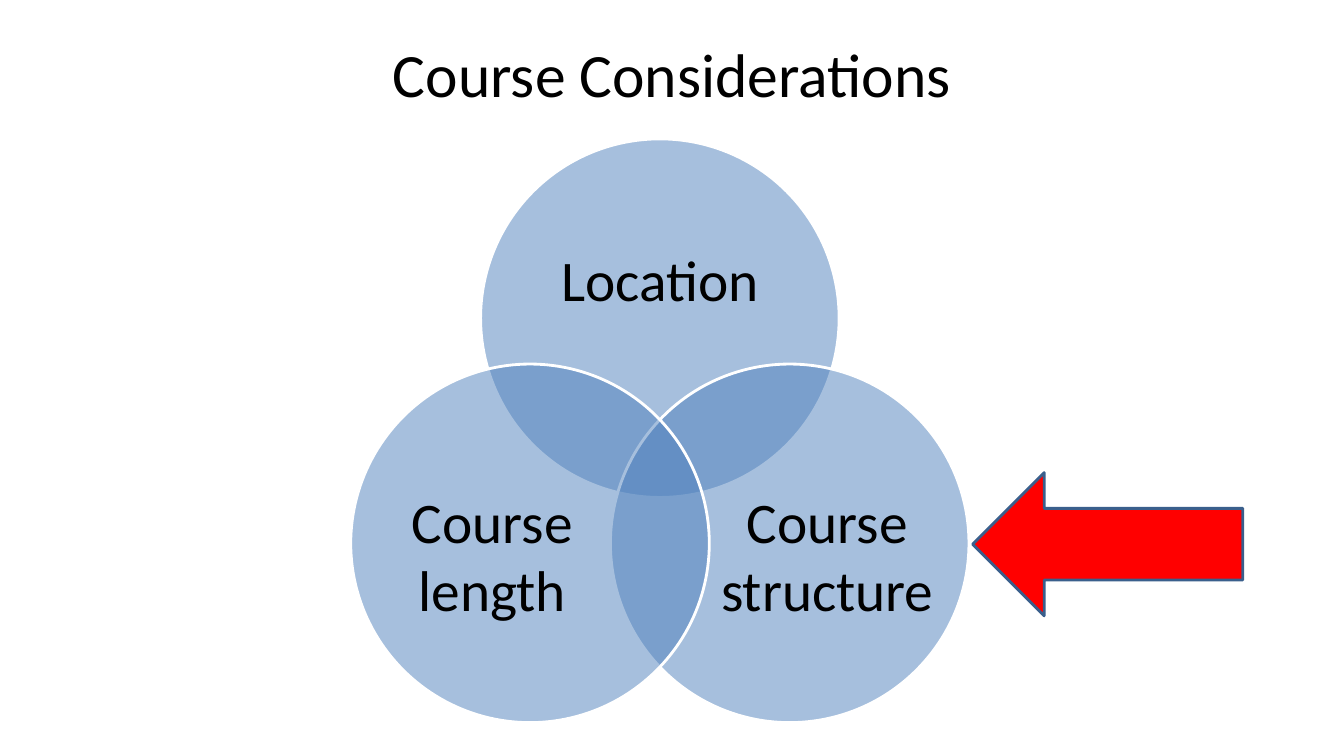
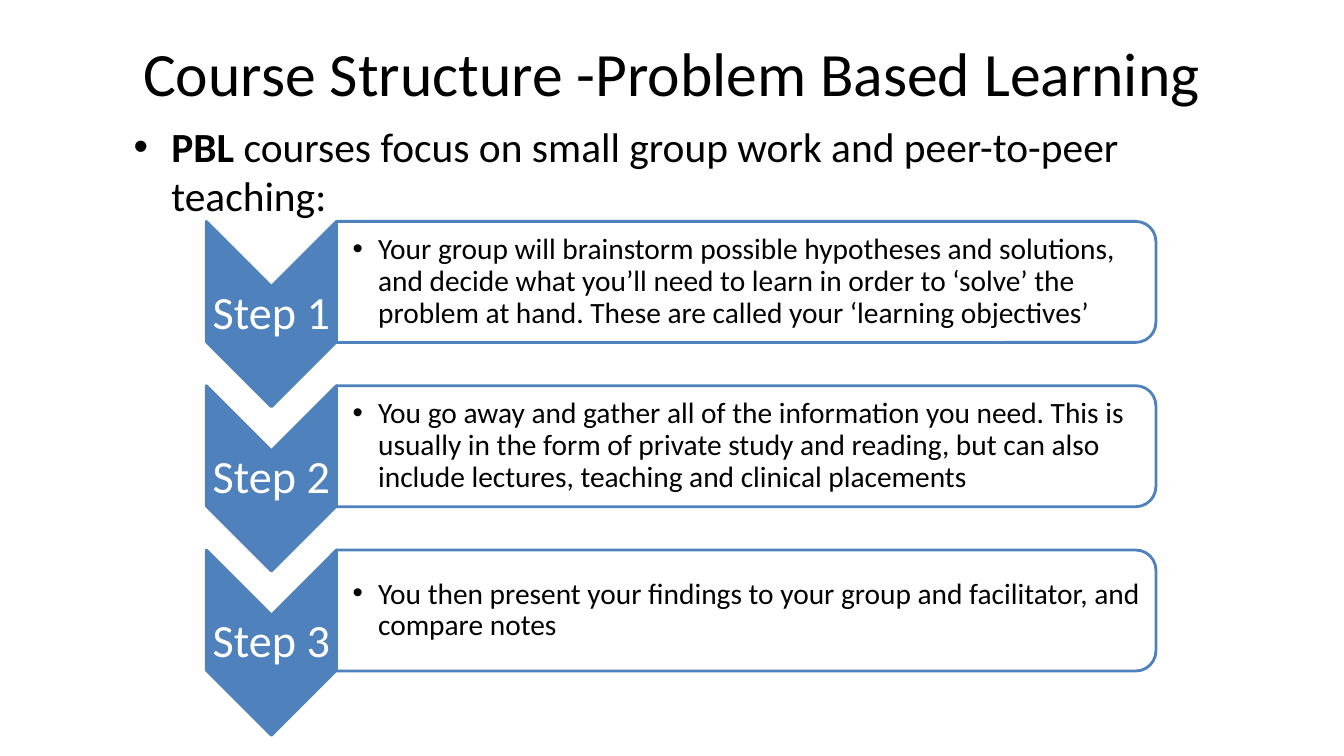
from lxml import etree
from pptx import Presentation
from pptx.dml.color import RGBColor
from pptx.enum.shapes import MSO_SHAPE
from pptx.enum.text import MSO_ANCHOR, MSO_AUTO_SIZE, PP_ALIGN
from pptx.oxml.ns import qn
from pptx.util import Cm, Pt

OVAL, LEFT_ARROW = MSO_SHAPE.OVAL, MSO_SHAPE.LEFT_ARROW
CHEVRON, ROUNDED_END = MSO_SHAPE.CHEVRON, MSO_SHAPE.ROUND_2_SAME_RECTANGLE
MIDDLE, TOP = MSO_ANCHOR.MIDDLE, MSO_ANCHOR.TOP
CENTER, LEFT = PP_ALIGN.CENTER, PP_ALIGN.LEFT

BLUE = RGBColor(0x4F, 0x81, 0xBD)
ARROW_EDGE = RGBColor(0x3A, 0x5F, 0x8C)
RED = RGBColor(0xFF, 0x00, 0x00)
WHITE = RGBColor(0xFF, 0xFF, 0xFF)
BLACK = RGBColor(0x00, 0x00, 0x00)
FONT = "Calibri"
LINE_WIDTH = Pt(2)
TITLE_SIZE, CIRCLE_SIZE, STEP_SIZE, DETAIL_SIZE, INTRO_SIZE = 44, 41, 33, 21, 29.6

STEPS = [
    ("Step 1", "Your group will brainstorm possible hypotheses and solutions, and "
               "decide what you’ll need to learn in order to ‘solve’ the problem at "
               "hand. These are called your ‘learning objectives’"),
    ("Step 2", "You go away and gather all of the information you need. This is "
               "usually in the form of private study and reading, but can also "
               "include lectures, teaching and clinical placements"),
    ("Step 3", "You then present your findings to your group and facilitator, and "
               "compare notes"),
]


def set_all(target, values):
    for name, value in values.items():
        setattr(target, name, value)


def place(shape, box):
    set_all(shape, dict(zip(("left", "top", "width", "height"), map(Cm, box))))


def write(frame, runs, size, color=BLACK, align=CENTER, anchor=MIDDLE,
          spacing=1.0, insets=None):
    """Fill the frame with one paragraph of (text, bold) runs and return it."""
    set_all(frame, {"word_wrap": True, "auto_size": MSO_AUTO_SIZE.NONE,
                    "vertical_anchor": anchor})
    if insets:
        sides = ("margin_left", "margin_top", "margin_right", "margin_bottom")
        set_all(frame, dict(zip(sides, map(Cm, insets))))
    paragraph = frame.paragraphs[0]
    set_all(paragraph, {"alignment": align, "line_spacing": spacing})
    for text, bold in runs:
        run = paragraph.add_run()
        run.text = text
        set_all(run.font, {"name": FONT, "size": Pt(size), "bold": bold})
        run.font.color.rgb = color
    return paragraph


def add_text(slide, box, runs, size, **style):
    label = slide.shapes.add_textbox(*map(Cm, box))
    return write(label.text_frame, runs, size, **style)


def add_bullet(paragraph, indent):
    properties = paragraph._p.get_or_add_pPr()
    properties.set("marL", str(Cm(indent)))
    properties.set("indent", str(-Cm(indent)))
    etree.SubElement(properties, qn("a:buFont"), typeface="Arial")
    etree.SubElement(properties, qn("a:buChar"), char="•")


def add_figure(slide, preset, box, fill, edge, opacity=100, turned=False):
    """Draw a preset shape; a turned one fills the box after a quarter turn."""
    left, top, width, height = box
    if turned:
        shift = (width - height) / 2
        box = left + shift, top - shift, height, width
    figure = slide.shapes.add_shape(preset, *map(Cm, box))
    figure.shadow.inherit = False
    figure.rotation = 90 if turned else 0
    figure.fill.solid()
    figure.fill.fore_color.rgb = fill
    figure.line.color.rgb = edge
    figure.line.width = LINE_WIDTH
    if opacity < 100:
        color = figure._element.spPr.find(qn("a:solidFill"))[0]
        etree.SubElement(color, qn("a:alpha"), val=str(opacity * 1000))


def add_titled_slide(deck, title, box):
    slide = deck.slides.add_slide(deck.slide_layouts[5])
    place(slide.shapes.title, box)
    write(slide.shapes.title.text_frame, [(title, False)], TITLE_SIZE)
    return slide


def add_venn(slide, box):
    left, top, width, height = box
    diameter = 0.58 * width
    side, drop = width - diameter, height - diameter
    wide, narrow = (6.63, 4.06), (5.41, 4.98)
    outer = 0.86
    inner = diameter - outer - narrow[0]
    circles = [
        ("Location", side / 2, 0, (diameter - wide[0]) / 2, 1.6, wide, 0.9),
        ("Course structure", side, drop, inner, 2.31, narrow, 1.0),
        ("Course length", 0, drop, outer, 2.31, narrow, 1.0),
    ]
    for name, x, y, text_x, text_y, text_size, spacing in circles:
        x, y = left + x, top + y
        add_figure(slide, OVAL, (x, y, diameter, diameter), BLUE, WHITE, opacity=50)
        add_text(slide, (x + text_x, y + text_y, *text_size), [(name, False)],
                 CIRCLE_SIZE, spacing=spacing, insets=(0, 0, 0, 0))


def add_step(slide, box, name, detail):
    left, top, width, height = box
    arrow_width, panel_height, label_height, gap = 3.28, 3.05, 1.4, 0.15
    panel_left, panel_width = left + arrow_width, width - arrow_width
    add_figure(slide, CHEVRON, (left, top, arrow_width, height), BLUE, BLUE, turned=True)
    add_text(slide, (left, top + (height - label_height) / 2, arrow_width, label_height),
             [(name, False)], STEP_SIZE, color=WHITE, spacing=0.9, insets=(0.05,) * 4)
    add_figure(slide, ROUNDED_END, (panel_left, top, panel_width, panel_height),
               WHITE, BLUE, opacity=90, turned=True)
    paragraph = add_text(
        slide, (panel_left, top + gap, panel_width - gap, panel_height - 2 * gap),
        [(detail, False)], DETAIL_SIZE, align=LEFT, spacing=0.9,
        insets=(0.41, 0.03, 0.03, 0.03))
    add_bullet(paragraph, 0.64)


def add_steps(slide, box):
    left, top, width, height = box
    step_height = 4.67
    pitch = (height - step_height) / (len(STEPS) - 1)
    for index, (name, detail) in enumerate(STEPS):
        add_step(slide, (left, top + index * pitch, width, step_height), name, detail)


def add_considerations(deck):
    slide = add_titled_slide(deck, "Course Considerations", (1.7, 0.76, 30.48, 2.16))
    add_venn(slide, (8.84, 3.5, 15.58, 14.71))
    add_figure(slide, LEFT_ARROW, (24.51, 11.91, 6.81, 3.61), RED, ARROW_EDGE)


def add_problem_based_learning(deck):
    slide = add_titled_slide(deck, "Course Structure -Problem Based Learning",
                             (1.7, 0.23, 30.48, 3.18))
    add_steps(slide, (5.2, 5.58, 23.93, 12.95))
    intro = add_text(
        slide, (3.12, 2.92, 27, 2.59),
        [("PBL", True),
         (" courses focus on small group work and peer-to-peer teaching:", False)],
        INTRO_SIZE, align=LEFT, anchor=TOP)
    intro.space_before = Pt(2)
    add_bullet(intro, 0.95)


def main():
    deck = Presentation()
    set_all(deck, {"slide_width": Cm(33.87), "slide_height": Cm(19.05)})
    add_considerations(deck)
    add_problem_based_learning(deck)
    deck.save("out.pptx")


if __name__ == "__main__":
    main()
